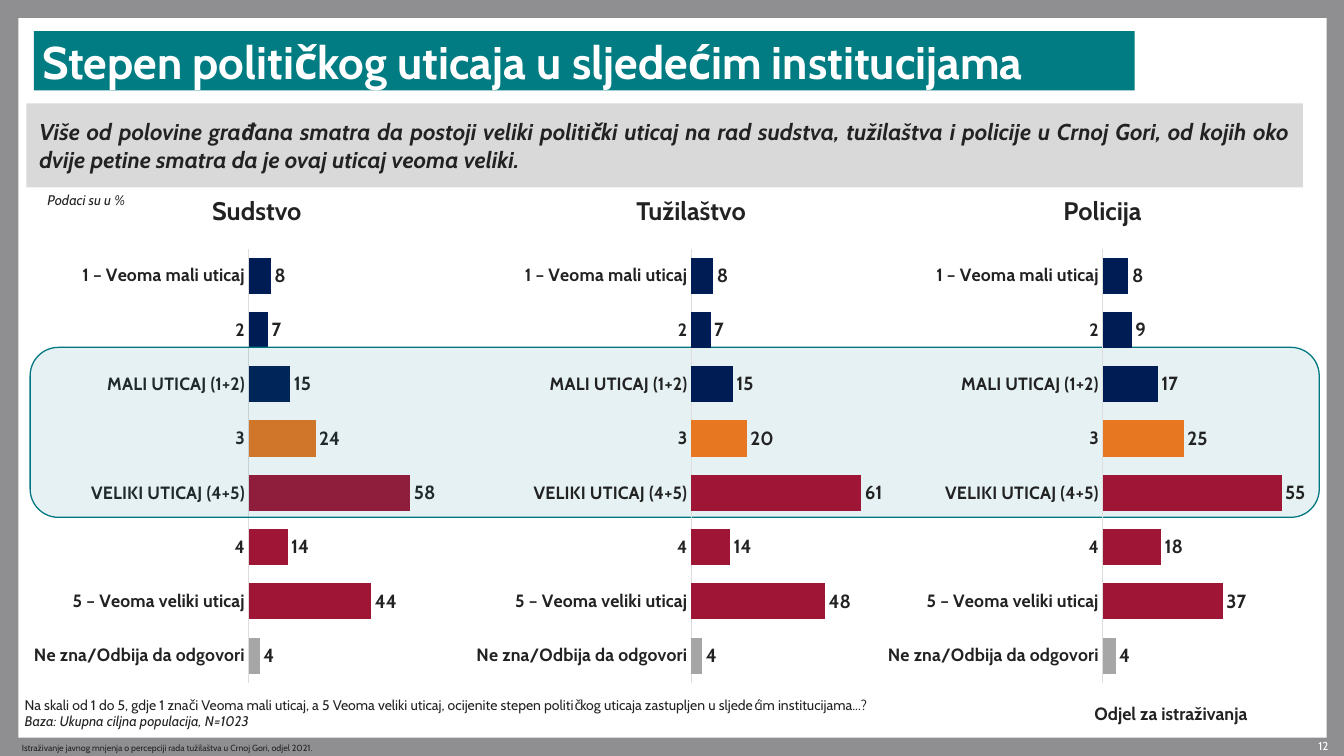
import dataclasses
import pptx
import pptx.chart.data
import pptx.dml.color
import pptx.enum.chart
import pptx.enum.shapes
import pptx.enum.text
import pptx.oxml
import pptx.oxml.ns
import pptx.util

Inches = pptx.util.Inches
Pt = pptx.util.Pt
Align = pptx.enum.text.PP_ALIGN
Anchor = pptx.enum.text.MSO_ANCHOR
Shape = pptx.enum.shapes.MSO_SHAPE
rgb = pptx.dml.color.RGBColor.from_string


@dataclasses.dataclass(frozen=True)
class Theme:
    font: str = "Cabin"
    ink: object = rgb("222223")
    white: object = rgb("FFFFFF")
    frame: object = rgb("8F8F92")
    title_band: object = rgb("007C82")
    summary_band: object = rgb("D9D9D9")
    highlight: object = rgb("007681")
    axis: object = rgb("DDDDDE")
    low: object = rgb("001C54")
    middle: object = rgb("E87722")
    high: object = rgb("9F1535")
    unknown: object = rgb("A6A6A6")
    title_size: object = Pt(36)
    heading_size: object = Pt(20)
    summary_size: object = Pt(18)
    value_size: object = Pt(15)
    category_size: object = Pt(14)
    note_size: object = Pt(11)
    number_size: object = Pt(9)
    source_size: object = Pt(7)


theme = Theme()


def write(shape, text, size, color=theme.ink, bold=False, italic=False,
          align=Align.LEFT, anchor=Anchor.TOP, margins=(0, 0)):
    frame = shape.text_frame
    frame.text = text
    frame.word_wrap = True
    frame.auto_size = pptx.enum.text.MSO_AUTO_SIZE.NONE
    frame.vertical_anchor = anchor
    frame.margin_left = frame.margin_right = Inches(margins[0])
    frame.margin_top = frame.margin_bottom = Inches(margins[1])
    for para in frame.paragraphs:
        para.alignment = align
        for span in para.runs:
            span.font.name = theme.font
            span.font.size = size
            span.font.color.rgb = color
            span.font.bold = bold
            span.font.italic = italic


def add_block(kind, left, top, width, height, color):
    block = page.shapes.add_shape(kind, Inches(left), Inches(top), Inches(width), Inches(height))
    block.shadow.inherit = False
    block.fill.solid()
    block.fill.fore_color.rgb = color
    block.line.fill.background()
    return block


deck = pptx.Presentation()
deck.slide_width = Inches(14.7)
deck.slide_height = Inches(8.27)
page = deck.slides.add_slide(deck.slide_layouts[5])
page.background.fill.solid()
page.background.fill.fore_color.rgb = theme.frame

title = page.shapes.title
title.left, title.top = Inches(0.37), Inches(0.34)
title.width, title.height = Inches(12.04), Inches(0.65)
title.fill.solid()
title.fill.fore_color.rgb = theme.title_band
write(title, "Stepen političkog uticaja u sljedećim institucijama", theme.title_size,
      theme.white, bold=True, anchor=Anchor.MIDDLE, margins=(0.09, 0.02))

panel = add_block(Shape.RECTANGLE, 0.2, 0.2, 14.31, 7.87, theme.white)
title.element.addprevious(panel.element)

summary = add_block(Shape.RECTANGLE, 0.29, 1.13, 13.96, 0.92, theme.summary_band)
write(summary, "Više od polovine građana smatra da postoji veliki politički uticaj na rad sudstva, "
      "tužilaštva i policije u Crnoj Gori, od kojih oko dvije petine smatra da je ovaj uticaj "
      "veoma veliki.", theme.summary_size, bold=True, italic=True, align=Align.JUSTIFY,
      anchor=Anchor.MIDDLE, margins=(0.14, 0))

categories = ["1 – Veoma mali uticaj", "2", "MALI UTICAJ (1+2)", "3", "VELIKI UTICAJ (4+5)",
              "4", "5 – Veoma veliki uticaj", "Ne zna/Odbija da odgovori"]
bar_colors = [theme.low] * 3 + [theme.middle] + [theme.high] * 3 + [theme.unknown]
institutions = [
    ("Sudstvo", 0.37, 2.81, 70, (8, 7, 15, 24, 58, 14, 44, 4)),
    ("Tužilaštvo", 5.21, 7.56, 70, (8, 7, 15, 20, 61, 14, 48, 4)),
    ("Policija", 9.71, 12.06, 60, (8, 9, 17, 25, 55, 18, 37, 4)),
]
plot_layout = (
    f'<c:layout {pptx.oxml.ns.nsdecls("c")}><c:manualLayout><c:layoutTarget val="inner"/>'
    '<c:xMode val="edge"/><c:yMode val="edge"/><c:x val="0.493"/><c:y val="0.026"/>'
    '<c:w val="0.455"/><c:h val="0.958"/></c:manualLayout></c:layout>'
)

for name, left, center, maximum, values in institutions:
    chart_data = pptx.chart.data.CategoryChartData()
    chart_data.categories = categories
    chart_data.add_series(name, values)
    chart = page.shapes.add_chart(
        pptx.enum.chart.XL_CHART_TYPE.BAR_CLUSTERED, Inches(left), Inches(2.59),
        Inches(4.73), Inches(4.96), chart_data).chart
    chart.has_legend = False
    chart.has_title = False
    chart.font.name = theme.font
    chart.font.size = theme.value_size
    chart.font.bold = True
    chart.font.color.rgb = theme.ink

    plot_area = chart.plots[0]._element.getparent()
    for old_layout in plot_area.findall(pptx.oxml.ns.qn("c:layout")):
        plot_area.remove(old_layout)
    plot_area.insert(0, pptx.oxml.parse_xml(plot_layout))

    category_axis = chart.category_axis
    category_axis.reverse_order = True
    category_axis.major_tick_mark = pptx.enum.chart.XL_TICK_MARK.NONE
    category_axis.format.line.color.rgb = theme.axis
    category_axis.format.line.width = Pt(0.75)
    category_axis.tick_labels.font.name = theme.font
    category_axis.tick_labels.font.size = theme.category_size
    category_axis.tick_labels.font.bold = True
    category_axis.tick_labels.font.color.rgb = theme.ink
    value_axis = chart.value_axis
    value_axis.visible = False
    value_axis.has_major_gridlines = False
    value_axis.minimum_scale = 0
    value_axis.maximum_scale = maximum

    bars = chart.plots[0]
    bars.gap_width = 50
    bars.vary_by_categories = False
    series = bars.series[0]
    series.format.fill.solid()
    series.format.fill.fore_color.rgb = theme.high
    for index, color in enumerate(bar_colors):
        if color != theme.high:
            point_fill = series.points[index].format.fill
            point_fill.solid()
            point_fill.fore_color.rgb = color
    labels = series.data_labels
    labels.show_value = True
    labels.position = pptx.enum.chart.XL_LABEL_POSITION.OUTSIDE_END
    labels.number_format = "#,##0"
    labels.number_format_is_linked = False
    labels.font.name = theme.font
    labels.font.size = theme.value_size
    labels.font.bold = True
    labels.font.color.rgb = theme.ink

    if name == "Sudstvo":
        highlight = add_block(Shape.ROUNDED_RECTANGLE, 0.33, 3.8, 14.1, 1.86, theme.highlight)
        highlight.line.color.rgb = theme.highlight
        highlight.line.width = Pt(1)
        fill_color = highlight.element.spPr.find(".//" + pptx.oxml.ns.qn("a:srgbClr"))
        fill_color.append(pptx.oxml.parse_xml(
            f'<a:alpha {pptx.oxml.ns.nsdecls("a")} val="10000"/>'))

    heading = page.shapes.add_textbox(Inches(center - 0.75), Inches(2.13), Inches(1.5), Inches(0.34))
    write(heading, name, theme.heading_size, bold=True, align=Align.CENTER)

notes = [
    ((0.42, 2.05, 1.34, 0.29), "Podaci su u %", theme.note_size,
     dict(italic=True, margins=(0.1, 0.05))),
    ((0.27, 7.55, 10, 0.5),
     "Na skali od 1 do 5, gdje 1 znači Veoma mali uticaj, a 5 Veoma veliki uticaj, ocijenite stepen "
     "političkog uticaja zastupljen u sljedećim institucijama...?\n"
     "Baza: Ukupna ciljna populacija, N=1023", theme.note_size, dict(anchor=Anchor.MIDDLE)),
    ((11.97, 7.69, 2.09, 0.24), "Odjel za istraživanja", theme.category_size, dict(bold=True)),
    ((0.24, 8.09, 4.86, 0.18),
     "Istraživanje javnog mnjenja o percepciji rada tužilaštva u Crnoj Gori, odjel 2021.",
     theme.source_size, dict(anchor=Anchor.MIDDLE)),
    ((14.06, 8.09, 0.47, 0.17), "12", theme.number_size,
     dict(color=theme.white, align=Align.RIGHT)),
]
for place, text, size, style in notes:
    box = page.shapes.add_textbox(*[Inches(length) for length in place])
    write(box, text, size, **style)
    if len(box.text_frame.paragraphs) > 1:
        box.text_frame.paragraphs[1].runs[0].font.italic = True

deck.save("out.pptx")
